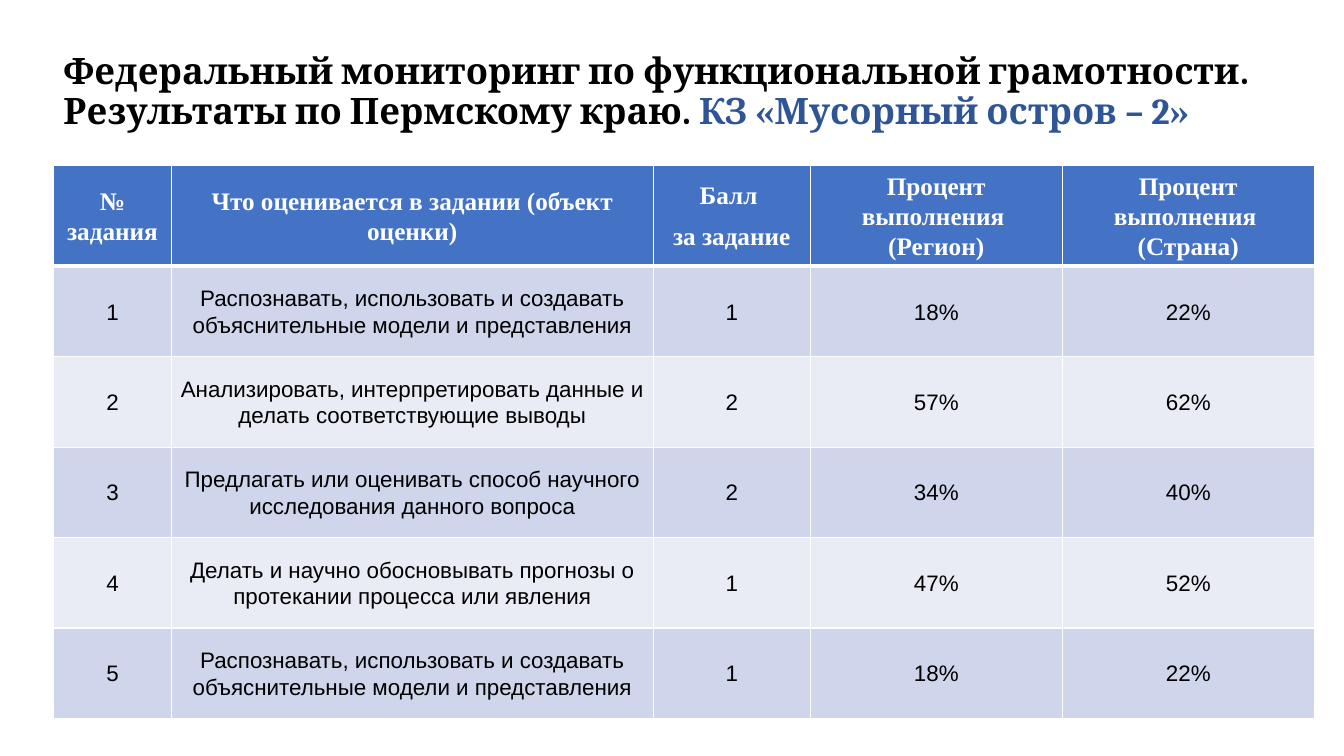
"""Build a slide with a table of functional literacy results."""
from lxml import etree
from pptx import Presentation
from pptx.dml.color import RGBColor
from pptx.enum.text import MSO_ANCHOR, MSO_AUTO_SIZE, PP_ALIGN
from pptx.oxml.ns import qn
from pptx.util import Cm, Pt

MIDDLE = MSO_ANCHOR.MIDDLE
CENTER = PP_ALIGN.CENTER
GROW = MSO_AUTO_SIZE.SHAPE_TO_FIT_TEXT

BLACK = RGBColor(0x00, 0x00, 0x00)
WHITE = RGBColor(0xFF, 0xFF, 0xFF)
NAVY = RGBColor(0x2F, 0x55, 0x97)
BLUE = RGBColor(0x44, 0x72, 0xC4)
DARK_BAND = RGBColor(0xCF, 0xD5, 0xEA)
LIGHT_BAND = RGBColor(0xE9, 0xEB, 0xF5)

TITLE = [
    ("Федеральный мониторинг по функциональной грамотности. Результаты по Пермскому краю. ", BLACK),
    ("КЗ «Мусорный остров – 2»", NAVY),
]
HEADER = [
    ["№ задания"],
    ["Что оценивается в задании (объект оценки)"],
    ["Балл ", "за задание"],
    ["Процент выполнения \n(Регион)"],
    ["Процент выполнения \n(Страна)"],
]
MODELS = "Распознавать, использовать и создавать объяснительные модели и представления"
TASKS = [
    (MODELS, 1, 18, 22),
    ("Анализировать, интерпретировать данные и делать соответствующие выводы", 2, 57, 62),
    ("Предлагать или оценивать способ научного исследования данного вопроса", 2, 34, 40),
    ("Делать и научно обосновывать прогнозы о протекании процесса или явления", 1, 47, 52),
    (MODELS, 1, 18, 22),
]

LEFT, WIDTH = 1.35, 31.77
TITLE_TOP, TITLE_HEIGHT = 1.22, 2.49
TABLE_TOP = 4.17
COLUMN_WIDTHS = [2.97, 12.14, 3.96, 6.35, 6.35]
HEADER_HEIGHT, TASK_HEIGHT = 2.54, 2.28


def add_span(para, text, font, size, color, bold):
    span = para.add_run()
    span.text = text
    span.font.name = font
    span.font.size = Pt(size)
    span.font.bold = bold
    span.font.color.rgb = color


def add_border(cell, side, width):
    line = etree.SubElement(cell._tc.get_or_add_tcPr(), qn("a:ln" + side), w=str(Pt(width)))
    fill = etree.SubElement(line, qn("a:solidFill"))
    etree.SubElement(fill, qn("a:srgbClr"), val=str(WHITE))


def fill_cell(cell, paragraphs, fill, top, bottom, style):
    for side, width in (("L", 1), ("R", 1), ("T", top), ("B", bottom)):
        add_border(cell, side, width)
    cell.fill.solid()
    cell.fill.fore_color.rgb = fill
    cell.vertical_anchor = MIDDLE
    cell.margin_left = cell.margin_right = Cm(0.18)
    cell.margin_top = cell.margin_bottom = 0
    frame = cell.text_frame
    for number, text in enumerate(paragraphs):
        para = frame.add_paragraph() if number else frame.paragraphs[0]
        para.alignment = CENTER
        para.line_spacing = 1.07
        para.space_after = Pt(8)
        for index, part in enumerate(text.split("\n")):
            if index:
                para.add_line_break()
            add_span(para, part, *style)


def add_title(page):
    box = page.shapes.add_textbox(Cm(LEFT), Cm(TITLE_TOP), Cm(WIDTH), Cm(TITLE_HEIGHT))
    frame = box.text_frame
    frame.word_wrap = True
    frame.auto_size = GROW
    para = frame.paragraphs[0]
    para.line_spacing = 0.9
    for text, color in TITLE:
        add_span(para, text, "Cambria", 26, color, True)


def add_results(page):
    rows = [HEADER]
    for number, (skill, points, region, country) in enumerate(TASKS, 1):
        rows.append([[str(number)], [skill], [str(points)], [f"{region}%"], [f"{country}%"]])
    heights = [HEADER_HEIGHT] + [TASK_HEIGHT] * len(TASKS)
    table = page.shapes.add_table(len(rows), len(HEADER), Cm(LEFT), Cm(TABLE_TOP),
                                  Cm(WIDTH), Cm(sum(heights))).table
    for column, width in zip(table.columns, COLUMN_WIDTHS):
        column.width = Cm(width)
    for index, (row, height) in enumerate(zip(rows, heights)):
        table.rows[index].height = Cm(height)
        if index == 0:
            fill, style = BLUE, ("Times New Roman", 18, WHITE, True)
        else:
            fill = DARK_BAND if index % 2 else LIGHT_BAND
            style = ("Arial", 16, BLACK, False)
        top = 3 if index == 1 else 1
        bottom = 3 if index == 0 else 1
        for column, paragraphs in enumerate(row):
            fill_cell(table.cell(index, column), paragraphs, fill, top, bottom, style)


def main():
    deck = Presentation()
    deck.slide_width, deck.slide_height = Cm(33.87), Cm(19.05)
    page = deck.slides.add_slide(deck.slide_layouts[6])
    add_results(page)
    add_title(page)
    deck.save("out.pptx")


if __name__ == "__main__":
    main()
